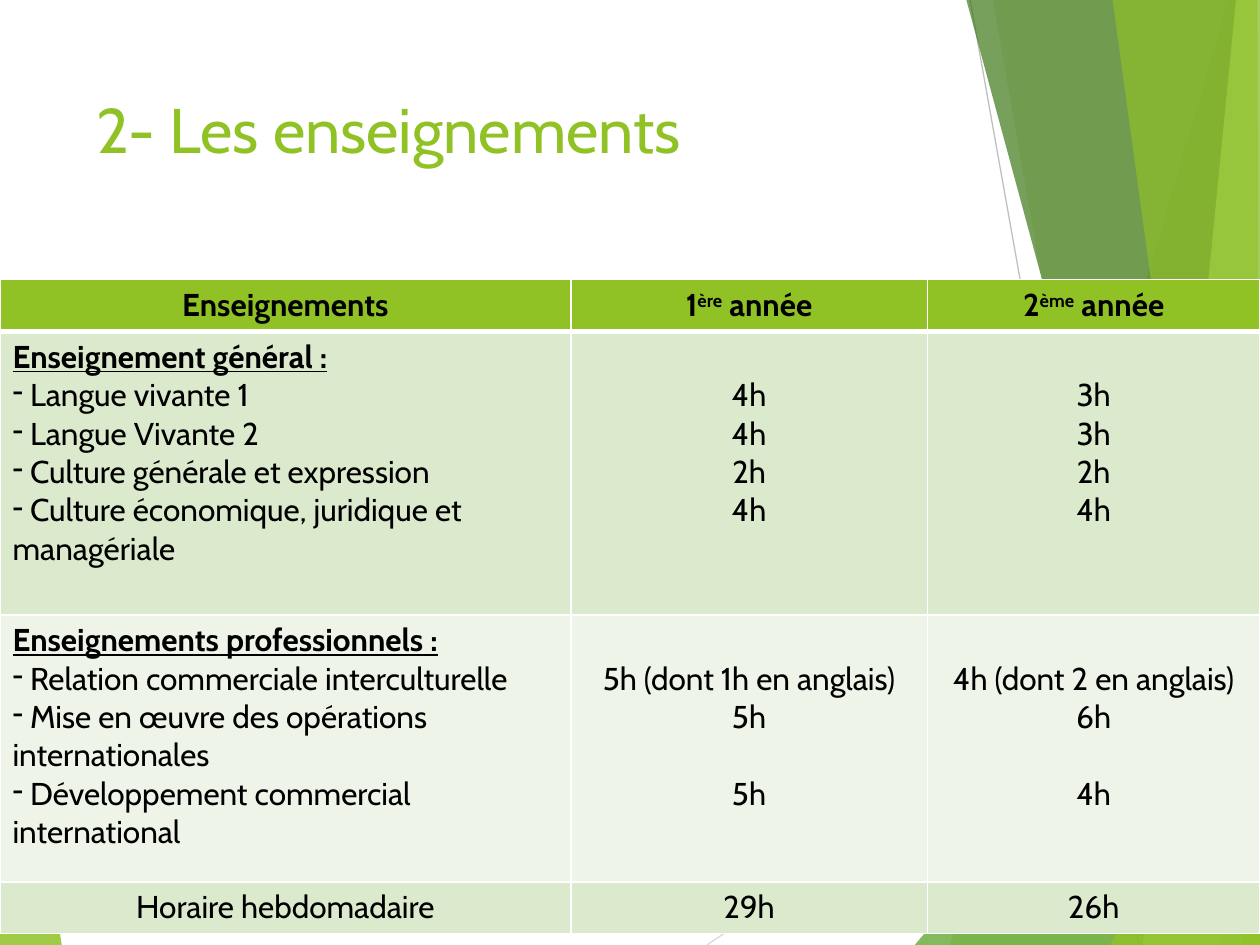
from lxml import etree
from pptx import Presentation
from pptx import util as u
from pptx.dml.color import RGBColor
from pptx.enum import shapes, text
from pptx.oxml.ns import qn

LIME = RGBColor(0x90, 0xC2, 0x26)
GREEN = RGBColor(0x54, 0xA0, 0x21)
FOREST = RGBColor(0x3F, 0x78, 0x19)
PALE_LIME = RGBColor(0xC0, 0xE4, 0x74)
BAND_DARK = RGBColor(0xDB, 0xE9, 0xCD)
BAND_LIGHT = RGBColor(0xEE, 0xF4, 0xE8)
LIGHT_GREY = RGBColor(0xD9, 0xD9, 0xD9)
GREY = RGBColor(0xBF, 0xBF, 0xBF)
WHITE = RGBColor(0xFF, 0xFF, 0xFF)
BLACK = RGBColor(0, 0, 0)

PLAIN, BOLD, HEADING, RAISED, BULLET, SPACED = range(6)
LINE_HEIGHT = 22

FACETS_BACK = [
    (LIME, 85, [(0, 43.9), (4.9, 75), (0, 75)]),
]
FACETS_FRONT = [
    (LIME, 30, [(97.5, 0), (75.4, 75), (100, 75), (100, 0)]),
    (LIME, 20, [(78.8, 0), (91.9, 75), (100, 75), (100, 0)]),
    (GREEN, 72, [(72.6, 75), (100, 42.9), (100, 75)]),
    (FOREST, 70, [(76.7, 0), (97, 75), (100, 75), (100, 0)]),
    (PALE_LIME, 70, [(98.1, 0), (90.7, 75), (100, 75), (100, 0)]),
    (LIME, 65, [(88.3, 0), (98.6, 75), (100, 75), (99.8, 0)]),
    (LIME, 80, [(88.1, 75), (100, 53.5), (100, 75)]),
]

GENERAL = ["Langue vivante 1", "Langue Vivante 2", "Culture générale et expression",
           "Culture économique, juridique et managériale"]
PROFESSIONAL = ["Relation commerciale interculturelle",
                "Mise en œuvre des opérations internationales",
                "Développement commercial international"]


def subjects(heading, names):
    """Return the paragraphs of a heading followed by its bulleted subjects."""
    return [[(heading, HEADING)]] + [[(" " + name, BULLET)] for name in names]


def hours(*values):
    """Return one paragraph per value, where a starred value has a line of space above."""
    return [[(value.strip("*"), SPACED if value[0] == "*" else PLAIN)] for value in values]


def year(number, suffix):
    """Return a column title with a raised ordinal suffix."""
    return [[(number, BOLD), (suffix, RAISED), (" année", BOLD)]]


ROWS = [
    (LIME, 4.1, [[[("Enseignements", BOLD)]], year("1", "ère"), year("2", "ème")]),
    (BAND_DARK, 22.5, [subjects("Enseignement général :", GENERAL),
                       hours("4h", "4h", "2h", "4h"), hours("3h", "3h", "2h", "4h")]),
    (BAND_LIGHT, 21.2, [subjects("Enseignements professionnels :", PROFESSIONAL),
                        hours("5h (dont 1h en anglais)", "5h", "*5h"),
                        hours("4h (dont 2 en anglais)", "6h", "*4h")]),
    (BAND_DARK, 4.1, [hours("Horaire hebdomadaire"), hours("29h"), hours("26h")]),
]


class SlideBuilder:
    """Hold the style and current slide, measured on a grid of 100 columns by 75 rows."""

    def __init__(self, deck, font="Cabin"):
        self.page = deck.slides.add_slide(deck.slide_layouts[6])
        self.font = font
        self.unit = deck.slide_width // 100

    def grid(self, *cells):
        return [u.Emu(round(cell * self.unit)) for cell in cells]

    def facet(self, color, opacity, points):
        corners = [self.grid(*point) for point in points]
        builder = self.page.shapes.build_freeform(*corners[0])
        builder.add_line_segments(corners[1:], close=True)
        shape = builder.convert_to_shape()
        shape.shadow.inherit = False
        shape.fill.solid()
        shape.fill.fore_color.rgb = color
        shape.line.fill.background()
        tint = shape.fill._xPr.find(qn("a:solidFill"))[0]
        etree.SubElement(tint, qn("a:alpha"), val=str(opacity * 1000))

    def line(self, start, end, color):
        line = self.page.shapes.add_connector(
            shapes.MSO_CONNECTOR.STRAIGHT, *self.grid(*start, *end))
        line.line.color.rgb = color
        line.line.width = u.Pt(0.75)
        etree.SubElement(line._element.spPr, qn("a:effectLst"))

    def run(self, para, words, size, color, kind=PLAIN):
        span = para.add_run()
        span.text = words
        font = span.font
        font.name, font.size, font.color.rgb = self.font, u.Pt(size), color
        font.bold = kind in (BOLD, HEADING, RAISED)
        font.underline = kind == HEADING
        if kind == RAISED:
            font._element.set("baseline", "30000")

    def title(self, words, *area):
        box = self.page.shapes.add_textbox(*self.grid(*area))
        box.text_frame.word_wrap = True
        self.run(box.text_frame.paragraphs[0], words, 36, LIME)

    def border(self, cell, side, points):
        edge = etree.SubElement(cell._tc.get_or_add_tcPr(), qn("a:ln" + side), w=str(u.Pt(points)))
        fill = etree.SubElement(edge, qn("a:solidFill"))
        etree.SubElement(fill, qn("a:srgbClr"), val=str(WHITE))

    def cell(self, cell, paragraphs, color, centered):
        for index, spans in enumerate(paragraphs):
            frame = cell.text_frame
            para = frame.add_paragraph() if index else frame.paragraphs[0]
            para.alignment = text.PP_ALIGN.CENTER if centered else text.PP_ALIGN.LEFT
            kind = spans[0][1]
            if kind == SPACED:
                para.space_before = u.Pt(LINE_HEIGHT)
            if kind == BULLET:
                props = para._p.get_or_add_pPr()
                props.set("marL", "0")
                props.set("indent", "0")
                etree.SubElement(props, qn("a:buChar"), char="-")
            for words, kind in spans:
                self.run(para, words, 18, BLACK, kind)
        cell.fill.solid()
        cell.fill.fore_color.rgb = color

    def table(self, rows, widths, left, top):
        heights = [height for _, height, _ in rows]
        table = self.page.shapes.add_table(
            len(rows), len(widths), *self.grid(left, top, sum(widths), sum(heights))).table
        table.horz_banding = False
        for column, width in zip(table.columns, self.grid(*widths)):
            column.width = width
        for r, (color, height, contents) in enumerate(rows):
            table.rows[r].height = self.grid(height)[0]
            for c, paragraphs in enumerate(contents):
                cell = table.cell(r, c)
                for side in "LRTB":
                    thick = (r, side) in ((0, "B"), (1, "T"))
                    self.border(cell, side, 3 if thick else 1)
                if c and len(paragraphs) > 1:
                    cell.margin_top = u.Inches(0.05) + u.Pt(LINE_HEIGHT)
                self.cell(cell, paragraphs, color, c > 0 or len(paragraphs) == 1)


def main():
    """Build the slide and save it."""
    deck = Presentation()
    deck.slide_width, deck.slide_height = u.Inches(10), u.Inches(7.5)
    slide = SlideBuilder(deck)
    for facet in FACETS_BACK:
        slide.facet(*facet)
    slide.line((56.1, 75), (100, 45.7), LIGHT_GREY)
    slide.line((77, 0), (90.4, 75), GREY)
    for facet in FACETS_FRONT:
        slide.facet(*facet)
    slide.title("2- Les enseignements", 6.7, 6.7, 69.4, 14.4)
    slide.table(ROWS, [45.3, 28.3, 26.4], 0, 22.2)
    deck.save("out.pptx")


if __name__ == "__main__":
    main()
